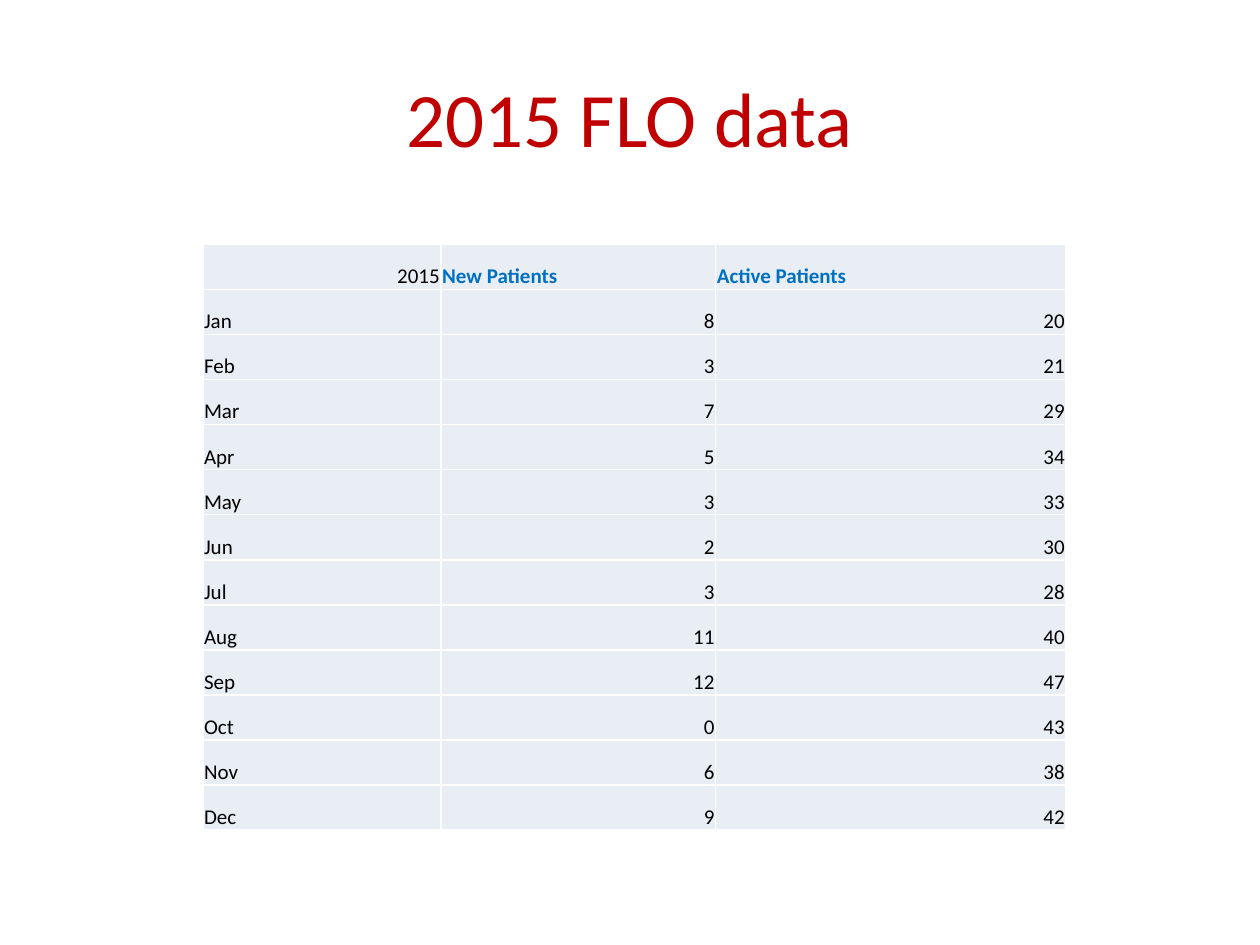
from lxml import etree
from pptx import Presentation
from pptx import util as u
from pptx.dml.color import RGBColor
from pptx.enum import text
from pptx.oxml import ns

RED = RGBColor(0xC0, 0x00, 0x00)
BLUE = RGBColor(0x00, 0x70, 0xC0)
BLACK = RGBColor(0x00, 0x00, 0x00)
WHITE = RGBColor(0xFF, 0xFF, 0xFF)
PALE = RGBColor(0xE9, 0xED, 0xF4)

TITLE_FONT = {"name": "Calibri", "size": u.Pt(44), "bold": False}
BODY_FONT = {"name": "Calibri", "size": u.Pt(12), "bold": False}
HEADING_FONT = {**BODY_FONT, "bold": True}
CELL_FORMAT = {
    "margin_left": u.Inches(0.01),
    "margin_top": u.Inches(0.01),
    "margin_right": u.Inches(0.01),
    "margin_bottom": 0,
    "vertical_anchor": text.MSO_ANCHOR.BOTTOM,
}

COLUMN_WIDTHS = (1.89, 2.18, 2.78)
PATIENTS = [
    (2015, "New Patients", "Active Patients"),
    ("Jan", 8, 20),
    ("Feb", 3, 21),
    ("Mar", 7, 29),
    ("Apr", 5, 34),
    ("May", 3, 33),
    ("Jun", 2, 30),
    ("Jul", 3, 28),
    ("Aug", 11, 40),
    ("Sep", 12, 47),
    ("Oct", 0, 43),
    ("Nov", 6, 38),
    ("Dec", 9, 42),
]


def apply_format(target, values):
    for attribute, value in values.items():
        setattr(target, attribute, value)


def write_text(frame, wording, font, color, align):
    paragraph = frame.paragraphs[0]
    paragraph.alignment = align
    run = paragraph.add_run()
    run.text = wording
    apply_format(run.font, font)
    run.font.color.rgb = color


def add_borders(cell, color, width):
    properties = cell._tc.get_or_add_tcPr()
    for side in ("a:lnL", "a:lnR", "a:lnT", "a:lnB"):
        line = etree.SubElement(properties, ns.qn(side), w=str(width))
        fill = etree.SubElement(line, ns.qn("a:solidFill"))
        etree.SubElement(fill, ns.qn("a:srgbClr"), val=str(color))


def fill_cell(cell, value, is_heading):
    apply_format(cell, CELL_FORMAT)
    add_borders(cell, WHITE, u.Pt(1))
    cell.fill.solid()
    cell.fill.fore_color.rgb = PALE
    # Numbers sit right, words sit left
    align = text.PP_ALIGN.RIGHT if isinstance(value, int) else text.PP_ALIGN.LEFT
    font, color = (HEADING_FONT, BLUE) if is_heading else (BODY_FONT, BLACK)
    write_text(cell.text_frame, str(value), font, color, align)


def add_title(slide, wording):
    title = slide.shapes.title
    apply_format(title, {"left": u.Inches(0.5), "top": u.Inches(0.3),
                         "width": u.Inches(9), "height": u.Inches(1.25)})
    title.text_frame.vertical_anchor = text.MSO_ANCHOR.MIDDLE
    write_text(title.text_frame, wording, TITLE_FONT, RED, text.PP_ALIGN.CENTER)


def add_patient_table(slide):
    patients = slide.shapes.add_table(
        len(PATIENTS), len(COLUMN_WIDTHS), u.Inches(1.61), u.Inches(1.94),
        u.Inches(sum(COLUMN_WIDTHS)), u.Inches(4.65)).table
    patients.first_row = patients.horz_banding = False
    for column, width in zip(patients.columns, COLUMN_WIDTHS):
        column.width = u.Inches(width)
    for row, values in enumerate(PATIENTS):
        for column, value in enumerate(values):
            fill_cell(patients.cell(row, column), value, row == 0 and column > 0)


def main():
    deck = Presentation()
    deck.slide_width, deck.slide_height = u.Inches(10), u.Inches(7.5)
    slide = deck.slides.add_slide(deck.slide_layouts[5])  # title only
    add_title(slide, "2015 FLO data")
    add_patient_table(slide)
    deck.save("out.pptx")


if __name__ == "__main__":
    main()
